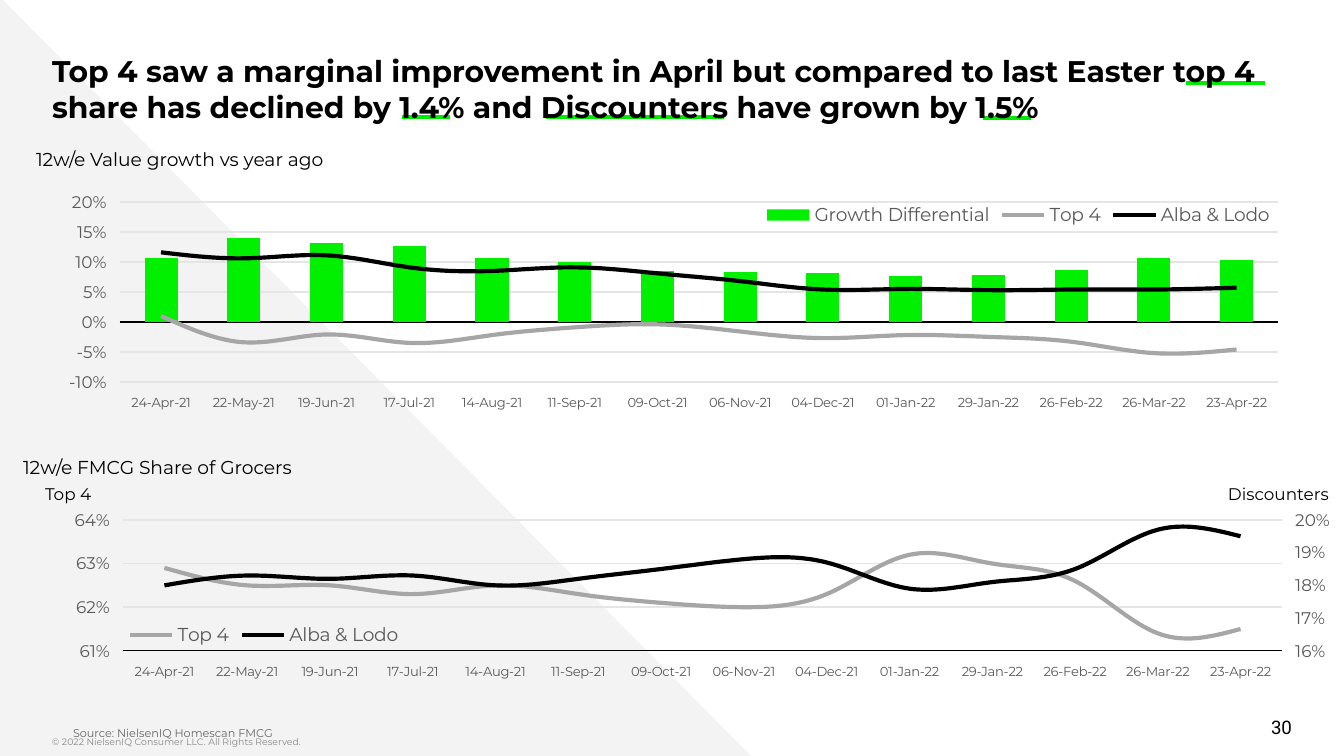
from copy import deepcopy
from dataclasses import dataclass

from lxml import etree
from pptx import Presentation
from pptx.chart.axis import ValueAxis
from pptx.chart.data import CategoryChartData
from pptx.dml.color import RGBColor
from pptx.enum.chart import (XL_CHART_TYPE, XL_LEGEND_POSITION, XL_MARKER_STYLE,
                             XL_TICK_LABEL_POSITION, XL_TICK_MARK)
from pptx.enum.shapes import MSO_CONNECTOR, MSO_SHAPE
from pptx.enum.text import MSO_ANCHOR, MSO_AUTO_SIZE, PP_ALIGN
from pptx.oxml import parse_xml
from pptx.oxml.ns import nsdecls, qn
from pptx.util import Emu, Pt


@dataclass(frozen=True)
class Theme:
    font: str = "Montserrat"
    number_font: str = "Roboto"
    ink: str = "000000"
    axis: str = "595959"
    source: str = "666666"
    copyright: str = "888888"
    grid: str = "E5E5E5"
    wedge: str = "F3F3F3"
    accent: str = "00EB00"
    bar: str = "00F000"
    top4: str = "A6A6A6"
    title_size: int = 16
    label_size: int = 10
    axis_size: int = 9
    category_size: int = 7
    source_size: int = 6
    copyright_size: int = 5


THEME = Theme()
EMU_PER_PX = 914400 / 134.4
TOP4, DISCOUNTERS = "Top 4", "Alba & Lodo"
DATES = ["24-Apr-21", "22-May-21", "19-Jun-21", "17-Jul-21", "14-Aug-21",
         "11-Sep-21", "09-Oct-21", "06-Nov-21", "04-Dec-21", "01-Jan-22",
         "29-Jan-22", "26-Feb-22", "26-Mar-22", "23-Apr-22"]
GROWTH = {
    "Growth Differential": [0.106, 0.14, 0.132, 0.126, 0.107, 0.1, 0.085,
                            0.084, 0.081, 0.077, 0.078, 0.086, 0.107, 0.103],
    TOP4: [0.01, -0.034, -0.021, -0.035, -0.022, -0.009, -0.004,
           -0.016, -0.027, -0.022, -0.025, -0.033, -0.052, -0.046],
    DISCOUNTERS: [0.116, 0.106, 0.111, 0.091, 0.085, 0.091, 0.081,
                  0.068, 0.054, 0.055, 0.053, 0.054, 0.054, 0.057],
}
SHARE = {
    TOP4: [0.629, 0.625, 0.625, 0.623, 0.625, 0.623, 0.621,
           0.62, 0.623, 0.632, 0.63, 0.626, 0.614, 0.615],
    DISCOUNTERS: [0.18, 0.183, 0.182, 0.183, 0.18, 0.182, 0.185,
                  0.188, 0.187, 0.179, 0.181, 0.185, 0.197, 0.195],
}


def px(n):
    return Emu(round(n * EMU_PER_PX))


def rgb(color):
    return RGBColor.from_string(color)


def style_font(font, size, color, name=THEME.font, bold=False):
    font.name, font.size, font.bold = name, Pt(size), bold
    font.color.rgb = rgb(color)


def fill_text(sp, text, size, color, name=THEME.font, bold=False, wrap=True,
              insets=(13, 13), anchor=MSO_ANCHOR.TOP, align=PP_ALIGN.LEFT):
    tf = sp.text_frame
    tf.text = text
    tf.auto_size, tf.word_wrap, tf.vertical_anchor = MSO_AUTO_SIZE.NONE, wrap, anchor
    tf.margin_left = tf.margin_right = px(insets[0])
    tf.margin_top = tf.margin_bottom = px(insets[1])
    p = tf.paragraphs[0]
    p.alignment, p.space_before = align, Pt(0)
    style_font(p.runs[0].font, size, color, name, bold)
    return p


def add_text(slide, box, text, size, color, **options):
    sp = slide.shapes.add_textbox(*map(px, box))
    return fill_text(sp, text, size, color, **options)


def place_text(slide, sp, box, text, size, color, **options):
    sp.left, sp.top, sp.width, sp.height = map(px, box)
    slide.shapes._spTree.append(sp._element)
    return fill_text(sp, text, size, color, insets=(0, 13), **options)


def add_wedge(slide):
    sp = slide.shapes.add_shape(MSO_SHAPE.RIGHT_TRIANGLE, *map(px, (0, -3, 751, 759)))
    sp.shadow.inherit = False
    sp.fill.solid()
    sp.fill.fore_color.rgb = rgb(THEME.wedge)
    sp.line.fill.background()


def add_underline(slide, left, right, y):
    line = slide.shapes.add_connector(MSO_CONNECTOR.STRAIGHT, *map(px, (left, y, right, y)))
    line.line.color.rgb, line.line.width = rgb(THEME.accent), Pt(2.25)
    etree.SubElement(line._element.spPr, qn("a:effectLst"))


def set_layout(parent, frame, box, inner=False):
    for old in parent.findall(qn("c:layout")):
        parent.remove(old)
    left, top, width, height = frame
    shares = ((box[0] - left) / width, (box[1] - top) / height,
              box[2] / width, box[3] / height)
    target = '<c:layoutTarget val="inner"/>' if inner else ""
    modes = "".join(f'<c:{k}Mode val="edge"/>' for k in "xy")
    sizes = "".join(f'<c:{k} val="{v:.4f}"/>' for k, v in zip("xywh", shares))
    layout = parse_xml(f'<c:layout {nsdecls("c")}><c:manualLayout>'
                       f'{target}{modes}{sizes}</c:manualLayout></c:layout>')
    parent.insert(0 if inner else 1, layout)


def style_axes(chart, low, high, step):
    cat, val = chart.category_axis, chart.value_axis
    cat.tick_label_position = XL_TICK_LABEL_POSITION.LOW
    cat.major_tick_mark = XL_TICK_MARK.NONE
    cat.format.line.color.rgb, cat.format.line.width = rgb(THEME.ink), Pt(0.75)
    style_font(cat.tick_labels.font, THEME.category_size, THEME.axis)
    val.minimum_scale, val.maximum_scale, val.major_unit = low, high, step
    val.tick_labels.number_format, val.tick_labels.number_format_is_linked = "0%", False
    val.format.line.fill.background()
    style_font(val.tick_labels.font, THEME.axis_size, THEME.axis)
    grid = val.major_gridlines.format.line
    grid.color.rgb, grid.width = rgb(THEME.grid), Pt(0.75)


def add_chart(slide, kind, frame, data, scale, plot_box, legend_box):
    chart_data = CategoryChartData(number_format="0.0%")
    chart_data.categories = DATES
    for name, values in data.items():
        chart_data.add_series(name, values)
    chart = slide.shapes.add_chart(kind, *map(px, frame), chart_data).chart
    chart.has_title = False
    style_font(chart.font, THEME.label_size, THEME.ink)
    style_axes(chart, *scale)
    chart.has_legend = True
    chart.legend.position = XL_LEGEND_POSITION.TOP
    chart.legend.include_in_layout = False
    style_font(chart.legend.font, THEME.label_size, THEME.axis)
    set_layout(chart.legend._element, frame, legend_box)
    set_layout(chart._chartSpace.chart.plotArea, frame, plot_box, inner=True)
    return chart


def split_lines(chart):
    first = chart.plots[0]._element
    lines = parse_xml(f'<c:lineChart {nsdecls("c")}><c:grouping val="standard"/>'
                      '<c:varyColors val="0"/><c:marker val="1"/></c:lineChart>')
    for ser in first.findall(qn("c:ser"))[1:]:
        for flag in ser.findall(qn("c:invertIfNegative")):
            ser.remove(flag)
        lines.find(qn("c:marker")).addprevious(ser)
    for ax_id in first.findall(qn("c:axId")):
        lines.append(deepcopy(ax_id))
    first.addnext(lines)
    return lines


def add_right_axis(chart, lines, low, high, step):
    cat, val = (deepcopy(axis._element) for axis in (chart.category_axis, chart.value_axis))
    for axis, own, other in ((cat, "5001", "5002"), (val, "5002", "5001")):
        axis.find(qn("c:axId")).set("val", own)
        axis.find(qn("c:crossAx")).set("val", other)
    for ax_id, own in zip(lines.findall(qn("c:axId")), ("5001", "5002")):
        ax_id.set("val", own)
    cat.find(qn("c:delete")).set("val", "1")
    val.find(qn("c:axPos")).set("val", "r")
    val.find(qn("c:crosses")).set("val", "max")
    chart.value_axis._element.addnext(val)
    val.addnext(cat)
    right = ValueAxis(val)
    right.has_major_gridlines = False
    right.minimum_scale, right.maximum_scale, right.major_unit = low, high, step


def style_lines(chart):
    colors = {TOP4: THEME.top4, DISCOUNTERS: THEME.ink}
    for plot in chart.plots:
        plot.vary_by_categories = False
        for series in plot.series:
            if series.name in colors:
                series.smooth = True
                series.marker.style = XL_MARKER_STYLE.NONE
                series.format.line.color.rgb = rgb(colors[series.name])
                series.format.line.width = Pt(2.25)


def add_growth_chart(slide):
    chart = add_chart(slide, XL_CHART_TYPE.COLUMN_CLUSTERED, (69, 191, 1211, 281), GROWTH,
                      (-0.1, 0.2, 0.05), (118, 202, 1160, 180), (760, 203, 516, 24))
    split_lines(chart)
    bars = chart.plots[0]
    bars.gap_width = 150
    bars.series[0].format.fill.solid()
    bars.series[0].format.fill.fore_color.rgb = rgb(THEME.bar)
    style_lines(chart)


def add_share_chart(slide):
    chart = add_chart(slide, XL_CHART_TYPE.LINE, (69, 509, 1263, 203), SHARE,
                      (0.61, 0.64, 0.01), (123, 520, 1159, 131), (123, 623, 282, 24))
    add_right_axis(chart, split_lines(chart), 0.16, 0.2, 0.01)
    style_lines(chart)


def main():
    prs = Presentation()
    prs.slide_width, prs.slide_height = px(1344), px(756)
    slide = prs.slides.add_slide(prs.slide_layouts[0])
    title, source = slide.placeholders
    add_wedge(slide)
    add_text(slide, (52, 729, 745, 27), "© 2022 NielsenIQ Consumer LLC. All Rights Reserved.",
             THEME.copyright_size, THEME.copyright, insets=(0, 7))
    add_text(slide, (989, 707, 303, 40), "30", THEME.label_size, THEME.ink,
             name=THEME.number_font, insets=(0, 7), anchor=MSO_ANCHOR.MIDDLE,
             align=PP_ALIGN.RIGHT)
    add_growth_chart(slide)
    add_share_chart(slide)
    p = place_text(slide, source, (52, 713, 1199, 27), "Source: NielsenIQ Homescan FMCG",
                   THEME.source_size, THEME.source)
    p._p.get_or_add_pPr().set("marL", str(px(21)))
    p._p.get_or_add_pPr().set("indent", "0")
    for box, text, size in (
            ((23, 141, 321, 36), "12w/e Value growth vs year ago", THEME.label_size),
            ((10, 449, 301, 36), "12w/e FMCG Share of Grocers", THEME.label_size),
            ((32, 477, 75, 34), "Top 4", THEME.axis_size),
            ((1215, 477, 129, 34), "Discounters", THEME.axis_size)):
        add_text(slide, box, text, size, THEME.ink, wrap=False, insets=(13, 7))
    for left, right, y in ((402, 450, 117), (546, 724, 117), (983, 1031, 118), (1186, 1265, 83)):
        add_underline(slide, left, right, y)
    place_text(slide, title, (52, 40, 1294, 85),
               "Top 4 saw a marginal improvement in April but compared to last Easter top 4 "
               "share has declined by 1.4% and Discounters have grown by 1.5%",
               THEME.title_size, THEME.ink, bold=True)
    prs.save("out.pptx")


if __name__ == "__main__":
    main()
